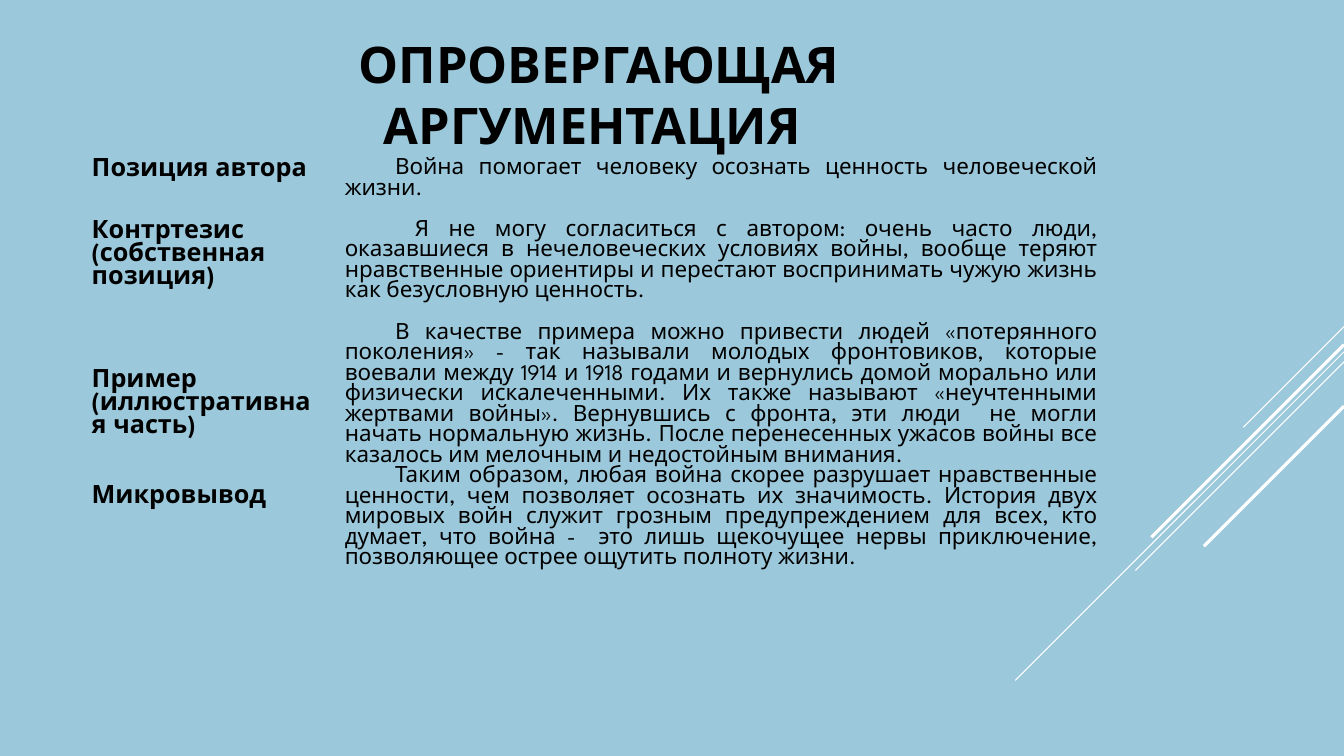
from lxml import etree
from pptx import Presentation
from pptx.dml.color import RGBColor
from pptx.enum.shapes import MSO_CONNECTOR
from pptx.enum.text import MSO_ANCHOR, PP_ALIGN
from pptx.oxml.ns import qn
from pptx.util import Inches, Pt

STRAIGHT = MSO_CONNECTOR.STRAIGHT
MIDDLE, TOP = MSO_ANCHOR.MIDDLE, MSO_ANCHOR.TOP
CENTER, LEFT, JUSTIFY = PP_ALIGN.CENTER, PP_ALIGN.LEFT, PP_ALIGN.JUSTIFY

FONT = "League Spartan"
BACKGROUND, BLACK, WHITE = "9BC8DA", "000000", "FFFFFF"

TITLE = " ОПРОВЕРГАЮЩАЯ АРГУМЕНТАЦИЯ"
ROWS = [
    (0.61, ["Позиция автора"],
     ["Война помогает человеку осознать ценность человеческой жизни."]),
    (1.02, ["Контртезис (собственная позиция)"],
     [" Я не могу согласиться с автором: очень часто люди, оказавшиеся в "
      "нечеловеческих условиях войны, вообще теряют нравственные ориентиры и "
      "перестают воспринимать чужую жизнь как безусловную ценность."]),
    (3.76, ["Пример (иллюстративная часть)", "Микровывод"],
     ["В качестве примера можно привести людей «потерянного поколения» - так "
      "называли молодых фронтовиков, которые воевали между 1914 и 1918 годами "
      "и вернулись домой морально или физически искалеченными. Их также "
      "называют «неучтенными жертвами войны». Вернувшись с фронта, эти люди  "
      "не могли начать нормальную жизнь. После перенесенных ужасов войны все "
      "казалось им мелочным и недостойным внимания.",
      "Таким образом, любая война скорее разрушает нравственные ценности, чем "
      "позволяет осознать их значимость. История двух мировых войн служит "
      "грозным предупреждением для всех, кто думает, что война -  это лишь "
      "щекочущее нервы приключение, позволяющее острее ощутить полноту жизни."]),
]
COLUMNS = (2.51, 7.67)
EXAMPLE_OFFSET = 0.46
LABEL_GAP = 33

RAYS = [(0, 1, 0.75), (0.25, 3.26, 0.75), (0.35, 2.07, 0.75),
        (0.18, 1.91, 2.25), (0.79, 1.39, 2.25)]

TITLE_FORMAT = {"size": Pt(36), "bold": True}
LABEL_FORMAT = {"size": Pt(18), "bold": True}
BODY_FORMAT = {"size": Pt(16), "bold": False}


def rgb(value):
    return RGBColor.from_string(value)


def write(tf, texts, font_format, align, gap=0, indent=0):
    for i, text in enumerate(texts):
        p = tf.add_paragraph() if i else tf.paragraphs[0]
        p.alignment = align
        p.space_before = Pt(gap if i else 0)
        if indent:
            pPr = p._p.get_or_add_pPr()
            pPr.set("marL", "0")
            pPr.set("indent", str(Inches(indent)))
        r = p.add_run()
        r.text = text
        for name, value in {"name": FONT, **font_format}.items():
            setattr(r.font, name, value)
        r.font.color.rgb = rgb(BLACK)


def add_rays(s, right, top):
    for drop, length, width in RAYS:
        y = top + drop
        line = s.shapes.add_connector(
            STRAIGHT, Inches(right), Inches(y),
            Inches(right - length), Inches(y + length))
        line.line.color.rgb = rgb(WHITE)
        line.line.width = Pt(width)
        etree.SubElement(line._element.spPr, qn("a:effectLst"))


def add_title(s, left, top, width, height):
    sp = s.shapes.title
    box = {"left": left, "top": top, "width": width, "height": height}
    for name, value in box.items():
        setattr(sp, name, Inches(value))
    tf = sp.text_frame
    tf.word_wrap = True
    tf.vertical_anchor = MIDDLE
    write(tf, [TITLE], TITLE_FORMAT, CENTER)
    tf.paragraphs[0].line_spacing = Pt(43.6)


def add_arguments(s, left, top):
    frame = s.shapes.add_table(
        len(ROWS), len(COLUMNS), Inches(left), Inches(top),
        Inches(sum(COLUMNS)), Inches(sum(row[0] for row in ROWS)))
    table = frame.table
    table.first_row = table.horz_banding = False
    for column, width in zip(table.columns, COLUMNS):
        column.width = Inches(width)
    for i, (height, labels, texts) in enumerate(ROWS):
        table.rows[i].height = Inches(height)
        label, body = table.cell(i, 0), table.cell(i, 1)
        for cell in (label, body):
            cell.fill.background()
            cell.vertical_anchor = TOP
            cell.margin_top = cell.margin_bottom = 0
        if len(labels) > 1:
            label.margin_top = Inches(EXAMPLE_OFFSET)
        write(label.text_frame, labels, LABEL_FORMAT, LEFT, gap=LABEL_GAP)
        write(body.text_frame, texts, BODY_FORMAT, JUSTIFY, indent=0.5)
    style = table._tbl.tblPr.find(qn("a:tableStyleId"))
    style.text = "{2D5ABB26-0587-4C30-8999-92F81FD0307C}"


def main():
    prs = Presentation()
    prs.slide_width, prs.slide_height = Inches(13.33), Inches(7.5)
    s = prs.slides.add_slide(prs.slide_layouts[5])
    s.background.fill.solid()
    s.background.fill.fore_color.rgb = rgb(BACKGROUND)
    add_rays(s, 13.33, 3.24)
    add_title(s, 1.21, 0.46, 9.33, 0.93)
    add_arguments(s, 0.81, 1.58)
    prs.save("out.pptx")


if __name__ == "__main__":
    main()
